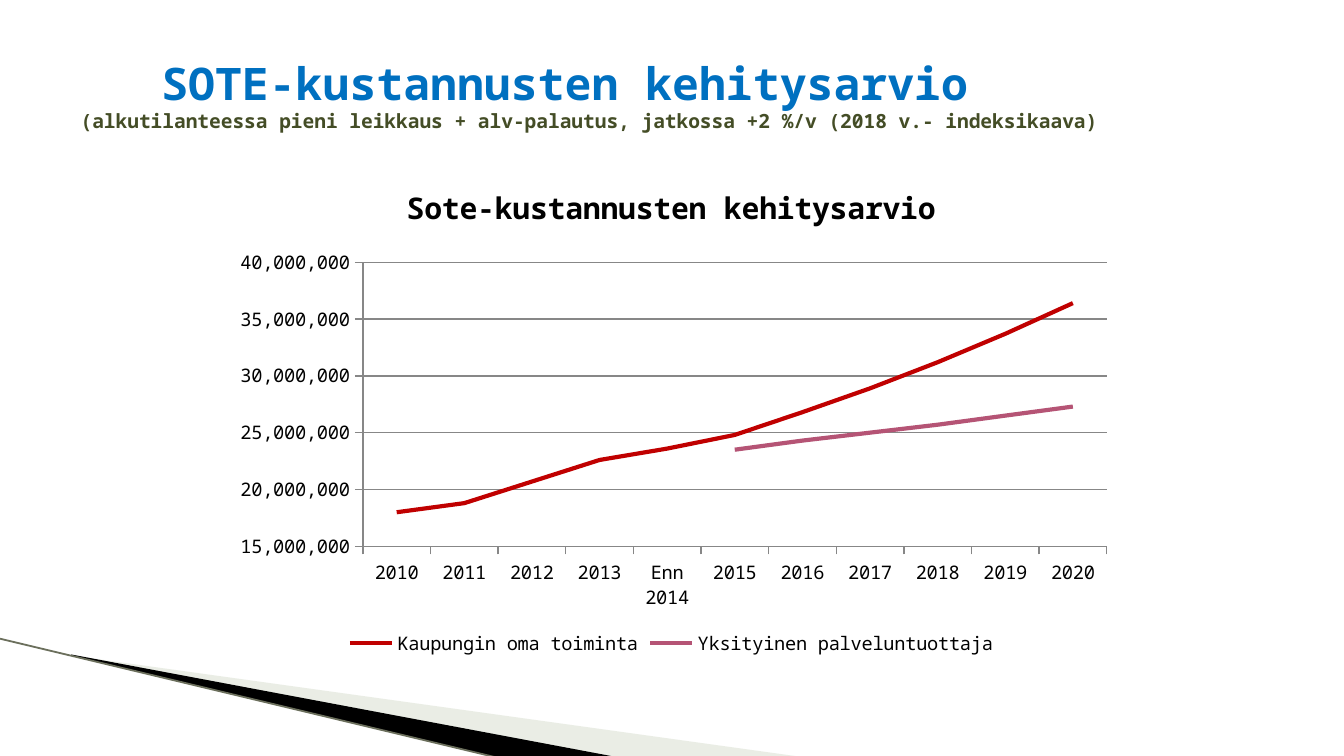
from lxml.etree import SubElement
from pptx import Presentation
from pptx.chart.data import CategoryChartData
from pptx.dml.color import RGBColor
from pptx.enum.chart import XL_CHART_TYPE, XL_LEGEND_POSITION, XL_TICK_MARK
from pptx.enum.shapes import MSO_CONNECTOR
from pptx.enum.text import MSO_ANCHOR, PP_ALIGN
from pptx.oxml import parse_xml
from pptx.oxml.ns import nsdecls, qn
from pptx.util import Inches, Pt

FONT = "Noto Sans Mono"
WIDTH = 10
HEIGHT = WIDTH * 9 / 16
GREY = "878787"
YEARS = ["2010", "2011", "2012", "2013", "Enn 2014", "2015",
         "2016", "2017", "2018", "2019", "2020"]
# Costs in millions
SERIES = [
    ("Kaupungin oma toiminta", "C00000",
     [18, 18.8, 20.7, 22.6, 23.6, 24.8, 26.8, 28.9, 31.2, 33.7, 36.4]),
    ("Yksityinen palveluntuottaja", "B55475",
     [None] * 5 + [23.5, 24.3, 25, 25.7, 26.5, 27.3]),
]
MILLION = 1_000_000


def rgb(value):
    return RGBColor.from_string(value)


def set_values(target, **values):
    for name, value in values.items():
        setattr(target, name, value)


def style_font(font, size, color, bold=False):
    set_values(font, name=FONT, size=Pt(size), bold=bold)
    font.color.rgb = rgb(color)


def style_line(line, color, width):
    line.color.rgb = rgb(color)
    line.width = Pt(width)


def place(shape, left, top, width, height):
    set_values(shape, left=Inches(left), top=Inches(top),
               width=Inches(width), height=Inches(height))


def add_wedge(page, points, color, opacity=100):
    """Add a filled outline; points are in inches, opacity in percent."""
    start, *others = [(Inches(x), Inches(y)) for x, y in points]
    builder = page.shapes.build_freeform(*start)
    builder.add_line_segments(others, close=True)
    wedge = builder.convert_to_shape()
    wedge.shadow.inherit = False
    wedge.fill.solid()
    wedge.fill.fore_color.rgb = rgb(color)
    wedge.line.fill.background()
    if opacity < 100:
        fill_color = wedge.fill._xPr.find(qn("a:solidFill"))[0]
        SubElement(fill_color, qn("a:alpha"), val=str(opacity * 1000))


def add_line(page, start, end, color, width):
    ends = [Inches(value) for value in (*start, *end)]
    line = page.shapes.add_connector(MSO_CONNECTOR.STRAIGHT, *ends)
    style_line(line.line, color, width)
    SubElement(line._element.spPr, qn("a:effectLst"))


def add_corner(page):
    add_wedge(page, [(0.55, 4.88), (5.95, 5.63), (4.56, 5.63)], "CBD4C0", 40)
    add_wedge(page, [(0.53, 4.87), (4.57, 5.63), (3.72, 5.64), (0.54, 4.88)],
              "000000")
    add_line(page, (-0.01, 4.75), (3.71, 5.64), "6B6F5C", 0.95)


def fill_title(page):
    box = page.shapes.title
    place(box, 0.05 * WIDTH, 0.23, 0.9 * WIDTH, 0.94)
    frame = box.text_frame
    set_values(frame, word_wrap=True, vertical_anchor=MSO_ANCHOR.MIDDLE)
    para = frame.paragraphs[0]
    set_values(para, alignment=PP_ALIGN.LEFT, line_spacing=1.0)
    para._p.get_or_add_pPr().set("indent", str(Inches(0.6)))
    heading = para.add_run()
    heading.text = "SOTE-kustannusten kehitysarvio"
    style_font(heading.font, 24, "0070C0", True)
    para.add_line_break()
    detail = para.add_run()
    detail.text = ("(alkutilanteessa pieni leikkaus + alv-palautus, "
                   "jatkossa +2 %/v (2018 v.- indeksikaava)")
    style_font(detail.font, 10.5, "444D26", True)


def set_plot_area(chart, **shares):
    """Fix the inner plot area as shares of the chart's size."""
    parts = "".join(f'<c:{key} val="{value}"/>' for key, value in shares.items())
    layout = parse_xml(
        f'<c:layout {nsdecls("c")}><c:manualLayout>'
        '<c:layoutTarget val="inner"/><c:xMode val="edge"/><c:yMode val="edge"/>'
        f'{parts}</c:manualLayout></c:layout>')
    area = chart._chartSpace.chart.plotArea
    for old in area.findall(qn("c:layout")):
        area.remove(old)
    area.insert(0, layout)


def style_axes(chart):
    for axis in (chart.category_axis, chart.value_axis):
        set_values(axis, major_tick_mark=XL_TICK_MARK.OUTSIDE,
                   minor_tick_mark=XL_TICK_MARK.NONE)
        style_line(axis.format.line, GREY, 0.75)
    values = chart.value_axis
    set_values(values, minimum_scale=15 * MILLION, maximum_scale=40 * MILLION,
               major_unit=5 * MILLION, has_major_gridlines=True)
    style_line(values.major_gridlines.format.line, GREY, 0.75)
    set_values(values.tick_labels, number_format="#,##0",
               number_format_is_linked=False)


def add_cost_chart(page):
    data = CategoryChartData(number_format="#,##0")
    data.categories = YEARS
    for name, _, costs in SERIES:
        data.add_series(name, [None if cost is None else round(cost * MILLION)
                               for cost in costs])
    frame = [Inches(value) for value in (1.62, 1.21, 6.75, 3.71)]
    chart = page.shapes.add_chart(XL_CHART_TYPE.LINE, *frame, data).chart
    style_font(chart.font, 10, "000000")
    set_values(chart, has_title=True, has_legend=True)
    title = chart.chart_title
    title.include_in_layout = False
    title.text_frame.text = "Sote-kustannusten kehitysarvio"
    style_font(title.text_frame.paragraphs[0].runs[0].font, 16, "000000", True)
    set_values(chart.legend, position=XL_LEGEND_POSITION.BOTTOM,
               include_in_layout=False)
    style_axes(chart)
    set_plot_area(chart, x=0.16, y=0.2, w=0.82, h=0.57)
    plot = chart.plots[0]
    plot.vary_by_categories = False
    for series, (_, color, _) in zip(plot.series, SERIES):
        series.smooth = False
        style_line(series.format.line, color, 2.25)


def main():
    deck = Presentation()
    set_values(deck, slide_width=Inches(WIDTH), slide_height=Inches(HEIGHT))
    page = deck.slides.add_slide(deck.slide_layouts[5])
    add_corner(page)
    fill_title(page)
    add_cost_chart(page)
    deck.save("out.pptx")


if __name__ == "__main__":
    main()
